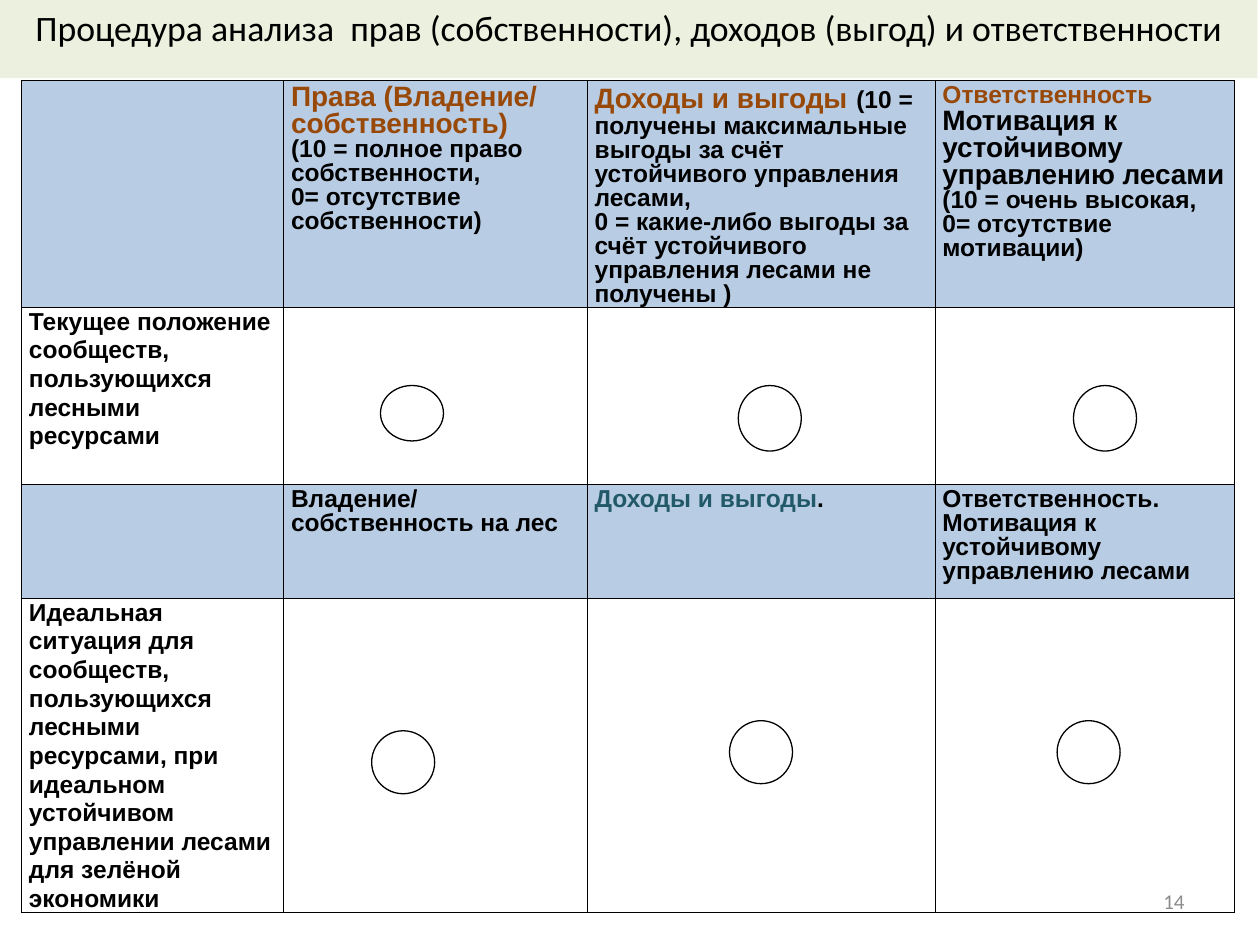
from lxml.etree import SubElement
from pptx import Presentation
from pptx.dml.color import RGBColor
from pptx.enum.shapes import MSO_SHAPE
from pptx.enum.text import MSO_ANCHOR, PP_ALIGN
from pptx.oxml.ns import qn
from pptx.util import Inches, Pt

BLACK = RGBColor(0x00, 0x00, 0x00)
WHITE = RGBColor(0xFF, 0xFF, 0xFF)
BROWN = RGBColor(0x98, 0x48, 0x07)
TEAL = RGBColor(0x21, 0x59, 0x68)
GRAY = RGBColor(0x8C, 0x8C, 0x8C)
BLUE = RGBColor(0xB8, 0xCC, 0xE4)
GREEN = RGBColor(0xEB, 0xF1, 0xDE)

SLIDE_WIDTH, SLIDE_HEIGHT = Inches(10), Inches(7.5)
GRID_COLUMNS = 100
THIN, THICK = 0.23, 0.75

TITLE = "Процедура анализа  прав (собственности), доходов (выгод) и ответственности"
COLUMN_WIDTHS = [20.8, 24.1, 27.6, 23.8]
ROW_HEIGHTS = [17.7, 14.1, 9, 20.8]
CELL_TEXTS = {
    (0, 1): [
        [("Права (Владение/", 16, BROWN)],
        [("собственность)", 16, BROWN)],
        [("(10 = полное право собственности,", 14, BLACK)],
        [("0= отсутствие собственности)", 14, BLACK)],
    ],
    (0, 2): [
        [("Доходы и выгоды", 16, BROWN), (" ", 18, BROWN),
         ("(10 = получены максимальные выгоды за счёт устойчивого управления лесами,", 14, BLACK)],
        [("0 = какие-либо выгоды за счёт устойчивого управления лесами не получены )", 14, BLACK)],
    ],
    (0, 3): [
        [("Ответственность", 14, BROWN)],
        [("Мотивация к устойчивому управлению лесами ", 16, BLACK),
         ("(10 = очень высокая, 0= отсутствие мотивации)", 14, BLACK)],
    ],
    (1, 0): [[("Текущее положение сообществ, пользующихся лесными ресурсами", 14, BLACK)]],
    (2, 1): [[("Владение/", 14, BLACK)], [("собственность на лес", 14, BLACK)]],
    (2, 2): [[("Доходы и выгоды", 14, TEAL), (".", 14, BLACK)]],
    (2, 3): [[("Ответственность. Мотивация к устойчивому управлению лесами", 14, BLACK)]],
    (3, 0): [[("Идеальная ситуация для сообществ, пользующихся лесными ресурсами, при идеальном "
               "устойчивом управлении лесами для зелёной экономики", 14, BLACK)]],
}
SCORE_CIRCLES = [
    (83.9, 57.2, 5), (29.5, 58, 5), (57.9, 57.2, 5),
    (85.2, 30.6, 5.2), (58.6, 30.6, 5.2), (30.2, 30.6, 4.4),
]


def grid(*counts):
    """Turn counts of square grid units into slide lengths."""
    return [int(SLIDE_WIDTH * count / GRID_COLUMNS) for count in counts]


def apply_format(target, values):
    """Set every attribute named in values on target."""
    for name, value in values.items():
        setattr(target, name, value)


def add_run(paragraph, text, size, color, font_name, bold=False):
    """Add one formatted run to a paragraph."""
    run = paragraph.add_run()
    run.text = text
    apply_format(run.font, {"name": font_name, "size": Pt(size), "bold": bold})
    run.font.color.rgb = color


def set_borders(cell, widths):
    """Draw solid black cell borders with widths given by side."""
    properties = cell._tc.get_or_add_tcPr()
    for side, width in widths.items():
        line = SubElement(properties, qn(f"a:ln{side}"), w=str(Pt(width)))
        fill = SubElement(line, qn("a:solidFill"))
        SubElement(fill, qn("a:srgbClr"), val=str(BLACK))


def fill_cell(cell, row, paragraphs):
    """Write the paragraphs of a table cell in its row's spacing."""
    heading = row % 2 == 0
    apply_format(cell, {
        "margin_left": Inches(0.06), "margin_right": Inches(0.06),
        "margin_top": Inches(0.03 if heading else 0), "margin_bottom": 0,
    })
    frame = cell.text_frame
    for index, runs in enumerate(paragraphs):
        paragraph = frame.add_paragraph() if index else frame.paragraphs[0]
        paragraph.line_spacing = 0.87 if heading else 1.04
        for text, size, color in runs:
            add_run(paragraph, text, size, color, "Arial", True)


def add_score_table(slide):
    """Add the table of current and ideal scores."""
    row_count, column_count = len(ROW_HEIGHTS), len(COLUMN_WIDTHS)
    table = slide.shapes.add_table(
        row_count, column_count, *grid(1.7, 6.4, sum(COLUMN_WIDTHS), sum(ROW_HEIGHTS))).table
    apply_format(table, {"first_row": False, "horz_banding": False})
    for column, width in zip(table.columns, grid(*COLUMN_WIDTHS)):
        column.width = width
    for row, height in zip(table.rows, grid(*ROW_HEIGHTS)):
        row.height = height
    for row in range(row_count):
        for column in range(column_count):
            cell = table.cell(row, column)
            outer = {"L": column == 0, "R": column == column_count - 1,
                     "T": row == 0, "B": row == row_count - 1}
            set_borders(cell, {side: THICK if edge else THIN for side, edge in outer.items()})
            if row % 2 == 0:
                cell.fill.solid()
                cell.fill.fore_color.rgb = BLUE
            else:
                cell.fill.background()
            if (row, column) in CELL_TEXTS:
                fill_cell(cell, row, CELL_TEXTS[row, column])


def add_filled_shape(slide, kind, box, color):
    """Add a flat preset shape without a shadow or an outline."""
    shape = slide.shapes.add_shape(kind, *grid(*box))
    shape.shadow.inherit = False
    shape.fill.solid()
    shape.fill.fore_color.rgb = color
    shape.line.fill.background()
    return shape


def add_score_circle(slide, left, top, height):
    """Add an outlined circle for a score."""
    circle = add_filled_shape(slide, MSO_SHAPE.OVAL, (left, top, 5, height), WHITE)
    circle.line.color.rgb = BLACK
    circle.line.width = Pt(THICK)


def write_line(shape, text, size, color, anchor, alignment):
    """Write one line of Calibri text in a shape."""
    frame = shape.text_frame
    apply_format(frame, {"word_wrap": True, "vertical_anchor": anchor})
    frame.paragraphs[0].alignment = alignment
    add_run(frame.paragraphs[0], text, size, color, "Calibri")


def main():
    """Build and save the slide."""
    presentation = Presentation()
    apply_format(presentation, {"slide_width": SLIDE_WIDTH, "slide_height": SLIDE_HEIGHT})
    slide = presentation.slides.add_slide(presentation.slide_layouts[6])
    add_score_table(slide)
    for circle in SCORE_CIRCLES:
        add_score_circle(slide, *circle)
    title = add_filled_shape(slide, MSO_SHAPE.RECTANGLE, (0, 0, 99.8, 6.2), GREEN)
    write_line(title, TITLE, 20.4, BLACK, MSO_ANCHOR.TOP, PP_ALIGN.CENTER)
    number = slide.shapes.add_textbox(*grid(71.7, 69.5, 23.3, 4))
    write_line(number, "14", 12, GRAY, MSO_ANCHOR.MIDDLE, PP_ALIGN.RIGHT)
    presentation.save("out.pptx")


if __name__ == "__main__":
    main()
